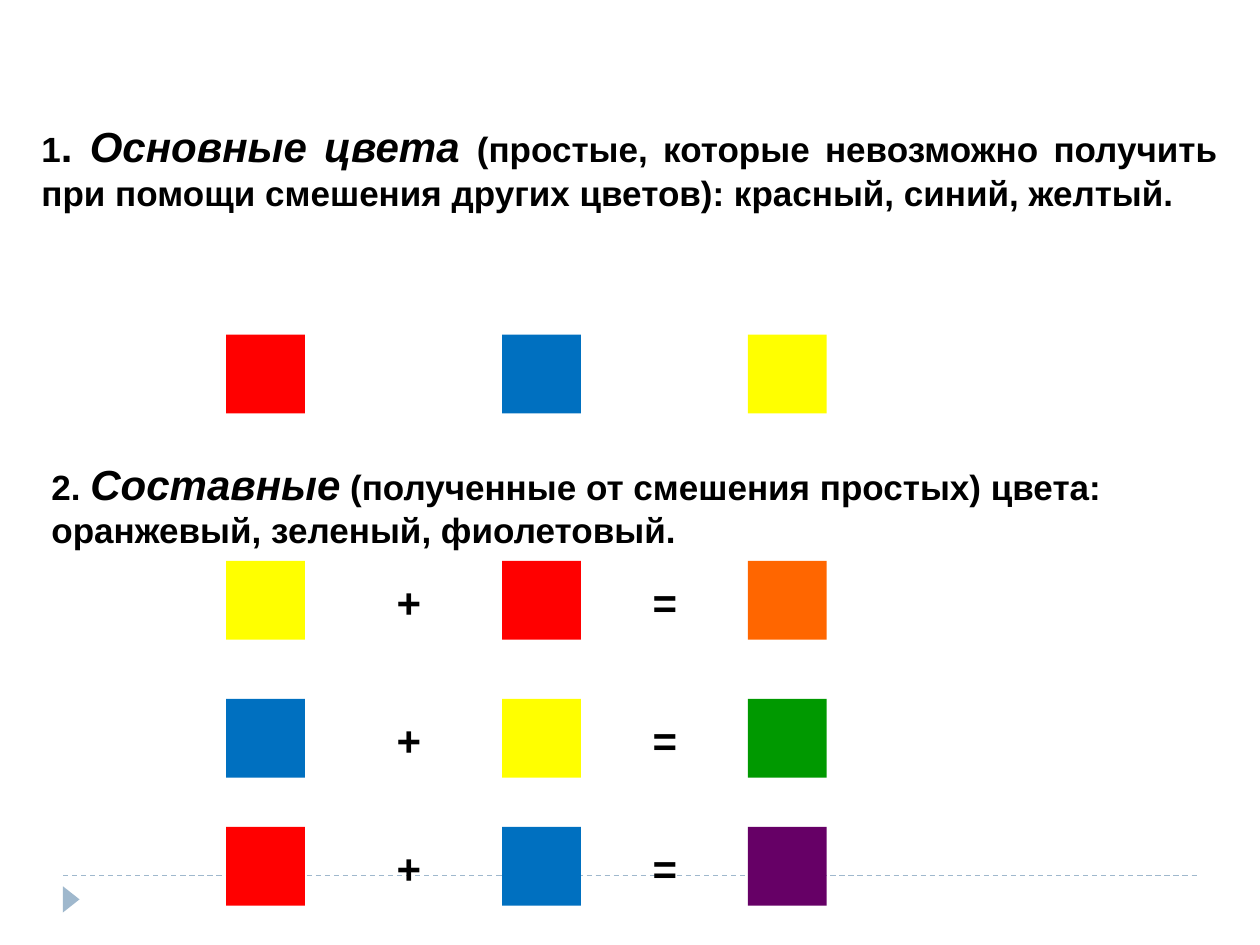
from lxml import etree
from pptx import Presentation
from pptx.dml.color import RGBColor
from pptx.enum.dml import MSO_LINE
from pptx.enum.shapes import MSO_CONNECTOR, MSO_SHAPE
from pptx.enum.text import MSO_ANCHOR, PP_ALIGN
from pptx.oxml.ns import qn
from pptx.util import Pt

RED, BLUE, YELLOW = "FF0000", "0070C0", "FFFF00"
ORANGE, GREEN, PURPLE = "FF6600", "009900", "660066"
ACCENT = "9FB8CD"
SQUARE = 45
COLUMNS = (129.3, 287, 427.4)
SYMBOLS = (("+", 219.6), ("=", 365.8))


def add_filled(kind, left, top, width, height, color):
    shape = page.shapes.add_shape(kind, Pt(left), Pt(top), Pt(width), Pt(height))
    shape.shadow.inherit = False
    shape.fill.solid()
    shape.fill.fore_color.rgb = RGBColor.from_string(color)
    shape.line.fill.background()
    return shape


def add_text(left, top, width, height, spans):
    """Add a one-paragraph box; spans are (text, size, italic)."""
    box = page.shapes.add_textbox(Pt(left), Pt(top), Pt(width), Pt(height))
    box.text_frame.word_wrap = True
    para = box.text_frame.paragraphs[0]
    para.font.name = "Arial"
    para.font.bold = True
    para.font.color.rgb = RGBColor.from_string("000000")
    for text, size, italic in spans:
        span = para.add_run()
        span.text = text
        span.font.size = Pt(size)
        span.font.italic = italic
    return box


deck = Presentation()
deck.slide_width, deck.slide_height = Pt(720), Pt(540)
page = deck.slides.add_slide(deck.slide_layouts[6])

# Footer decoration
rule = page.shapes.add_connector(MSO_CONNECTOR.STRAIGHT, Pt(36), Pt(500.4), Pt(684), Pt(500.4))
rule.line.color.rgb = RGBColor.from_string(ACCENT)
rule.line.width = Pt(0.75)
rule.line.dash_style = MSO_LINE.DASH
etree.SubElement(rule._element.spPr, qn("a:effectLst"))
marker = add_filled(MSO_SHAPE.ISOSCELES_TRIANGLE, 33.2, 509.2, 15, 9.5, ACCENT)
marker.rotation = 90

# Rows of colour squares: the primaries, then the three mixtures
rows = (
    (191.2, (RED, BLUE, YELLOW), False),
    (320.6, (YELLOW, RED, ORANGE), True),
    (399.4, (BLUE, YELLOW, GREEN), True),
    (472.6, (RED, BLUE, PURPLE), True),
)
for top, colors, is_mixture in rows:
    for left, color in zip(COLUMNS, colors):
        add_filled(MSO_SHAPE.RECTANGLE, left, top, SQUARE, SQUARE, color)
    if is_mixture:
        for symbol, left in SYMBOLS:
            sign = add_text(left, top + 5.5, 28.8, 36.4, [(symbol, 24, False)])
            sign.text_frame.word_wrap = False

# Explanations
primary = add_text(16.6, 16.6, 686.2, 108.7, [
    ("1", 20, False),
    (". ", 24, False),
    ("Основные цвета ", 24, True),
    ("(простые, которые невозможно получить при помощи смешения других цветов): "
     "красный, синий, желтый.", 20, False),
])
primary.text_frame.vertical_anchor = MSO_ANCHOR.BOTTOM
primary.text_frame.paragraphs[0].alignment = PP_ALIGN.JUSTIFY
add_text(22.3, 258.5, 686.2, 60.5, [
    ("2. ", 20, False),
    ("Составные", 24, True),
    (" (полученные от смешения простых) цвета: оранжевый, зеленый, фиолетовый.", 20, False),
])

deck.save("out.pptx")
